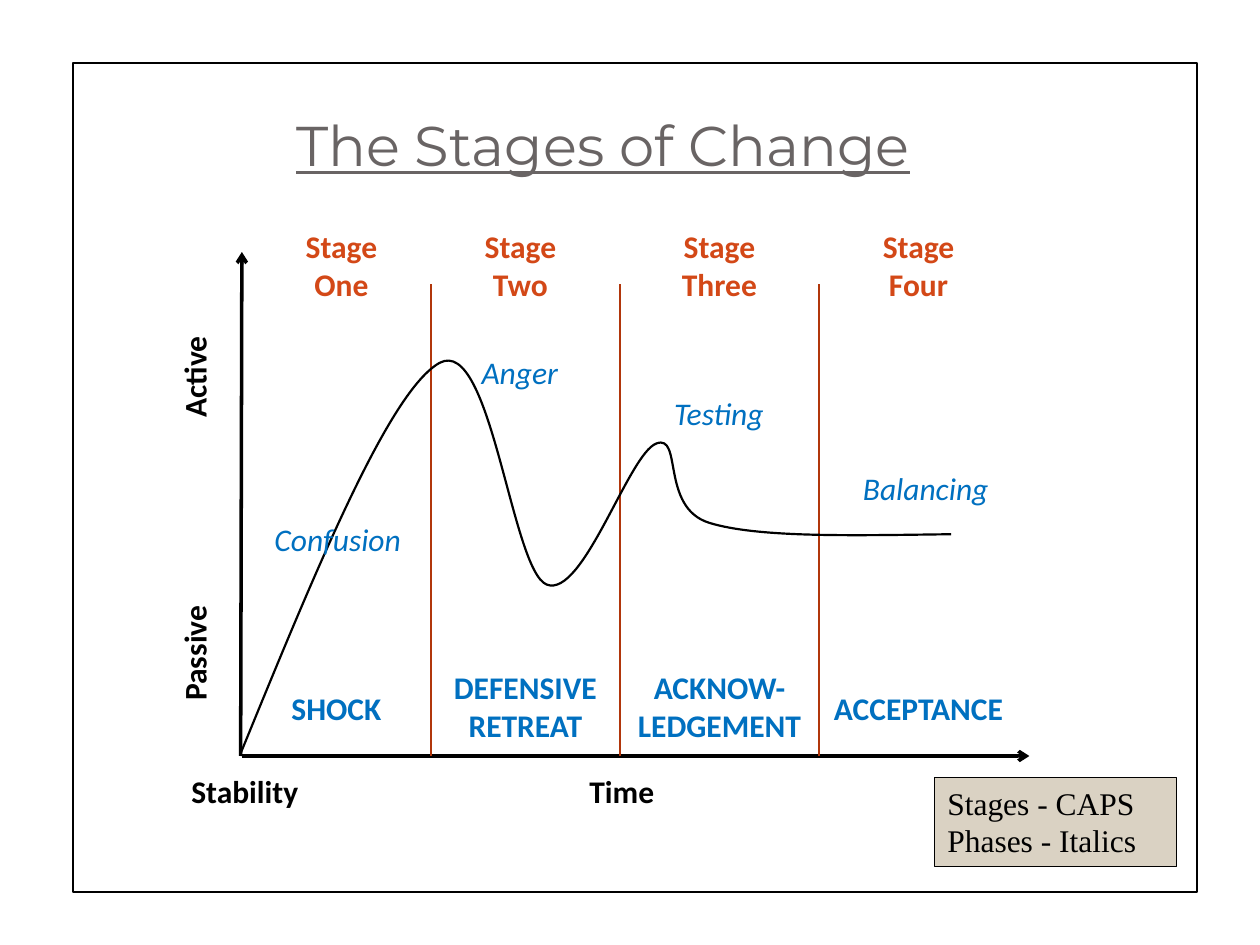
import pptx
import pptx.dml.color
import pptx.enum.shapes
import pptx.enum.text
import pptx.oxml.ns
import pptx.util
from lxml import etree
from pptx.util import Inches

BLACK, BLUE, ORANGE, RUST = "000000", "0070C0", "D34817", "B1360B"
ALIGN = pptx.enum.text.PP_ALIGN
RECTANGLE = pptx.enum.shapes.MSO_SHAPE.RECTANGLE
qn = pptx.oxml.ns.qn


def color(hex_code):
    """Return the colour for a hex string."""
    return pptx.dml.color.RGBColor.from_string(hex_code)


def set_line(item, hex_code, width):
    """Give a shape or connector a solid line."""
    item.line.color.rgb = color(hex_code)
    item.line.width = pptx.util.Pt(width)


def write(frame, lines, hex_code, align=ALIGN.LEFT, font="Calibri", size=18,
          bold=False, italic=False, underline=False):
    """Write one paragraph for each line of text."""
    frame.word_wrap = True
    frame.vertical_anchor = pptx.enum.text.MSO_ANCHOR.TOP
    frame.auto_size = pptx.enum.text.MSO_AUTO_SIZE.SHAPE_TO_FIT_TEXT
    for index, line in enumerate(lines):
        paragraph = frame.add_paragraph() if index else frame.paragraphs[0]
        paragraph.alignment = align
        run = paragraph.add_run()
        run.text = line
        run.font.name = font
        run.font.size = pptx.util.Pt(size)
        run.font.bold = bold
        run.font.italic = italic
        run.font.underline = underline
        run.font.color.rgb = color(hex_code)


def add_title(slide, text):
    """Place and format the slide title."""
    title = slide.shapes.title
    title.left, title.top = Inches(2.25), Inches(0.83)
    title.width, title.height = Inches(5.83), Inches(0.64)
    write(title.text_frame, [text], "696464", font="Montserrat", size=32,
          underline=True)


def add_box(slide, left, top, width, height, line_width, fill=None):
    """Add an outlined rectangle with an optional fill."""
    box = slide.shapes.add_shape(RECTANGLE, Inches(left), Inches(top),
                                 Inches(width), Inches(height))
    box.shadow.inherit = False
    set_line(box, BLACK, line_width)
    if fill:
        box.fill.solid()
        box.fill.fore_color.rgb = color(fill)
    else:
        box.fill.background()
    return box


def add_label(slide, lines, left, top, width, hex_code, height=0.4,
              rotation=0, **style):
    """Add a text label."""
    label = slide.shapes.add_textbox(Inches(left), Inches(top),
                                     Inches(width), Inches(height))
    label.rotation = rotation
    write(label.text_frame, lines, hex_code, **style)


def add_line(slide, start, end, hex_code, width, arrow=False):
    """Add a straight line, with an arrowhead at its end if asked."""
    line = slide.shapes.add_connector(
        pptx.enum.shapes.MSO_CONNECTOR.STRAIGHT,
        *(Inches(value) for value in start + end))
    set_line(line, hex_code, width)
    properties = line._element.spPr
    if arrow:
        etree.SubElement(properties.find(qn("a:ln")), qn("a:tailEnd"), type="arrow")
    etree.SubElement(properties, qn("a:effectLst"))


def add_curve(slide, knots):
    """Draw an open chain of cubic curves, three knots to a curve."""
    start, *rest = [(Inches(x), Inches(y)) for x, y in knots]
    builder = slide.shapes.build_freeform(*start, scale=1.0)
    builder.add_line_segments(rest, close=False)
    curve = builder.convert_to_shape()
    segments = list(curve._element.iter(qn("a:lnTo")))
    outline = segments[0].getparent()
    for first in range(0, len(segments), 3):
        cubic = etree.SubElement(outline, qn("a:cubicBezTo"))
        for segment in segments[first:first + 3]:
            cubic.append(segment[0])
            outline.remove(segment)
    curve.shadow.inherit = False
    curve.fill.background()
    set_line(curve, BLACK, 1.25)


def main():
    """Build the stages of change slide."""
    deck = pptx.Presentation()
    deck.slide_width, deck.slide_height = Inches(10), Inches(7.5)
    slide = deck.slides.add_slide(deck.slide_layouts[5])
    add_box(slide, 0.58, 0.5, 8.92, 6.58, 1)
    add_title(slide, "The Stages of Change")

    add_line(slide, (1.91, 6), (1.92, 2), BLACK, 2, arrow=True)
    add_line(slide, (1.92, 6), (8.17, 6), BLACK, 2, arrow=True)
    for divider in (3.42, 4.92, 6.5):
        add_line(slide, (divider, 6), (divider, 2.25), RUST, 0.75)
    add_curve(slide, [
        (1.91, 5.98), (2.5, 4.54), (3.09, 3.1), (3.49, 2.88),
        (3.9, 2.66), (4.06, 4.53), (4.34, 4.64),
        (4.63, 4.75), (4.99, 3.6), (5.21, 3.52),
        (5.42, 3.44), (5.24, 4.03), (5.63, 4.15),
        (6.02, 4.27), (6.78, 4.25), (7.55, 4.24)])

    for number, left in (("One", 2.25), ("Two", 3.67),
                         ("Three", 5.25), ("Four", 6.83)):
        add_label(slide, ["Stage", number], left, 1.75, 0.92, ORANGE, 0.71,
                  align=ALIGN.CENTER, bold=True)
    for phase, left, top, align in (("Confusion", 2.08, 4.08, ALIGN.LEFT),
                                    ("Anger", 3.5, 2.75, ALIGN.CENTER),
                                    ("Testing", 5.08, 3.08, ALIGN.CENTER),
                                    ("Balancing", 6.75, 3.67, ALIGN.LEFT)):
        add_label(slide, [phase], left, top, 1.25, BLUE, align=align, italic=True)
    for caption, left, top, width, rotation in (("Active", 1.04, 2.71, 1, 270),
                                                ("Passive", 1.04, 4.96, 1, 270),
                                                ("Stability", 1.42, 6.08, 1.08, 0),
                                                ("Time", 4.58, 6.08, 1, 0)):
        add_label(slide, [caption], left, top, width, BLACK,
                  rotation=rotation, bold=True)

    legend = add_box(slide, 7.42, 6.17, 1.92, 0.71, 0.5, "DAD2C3")
    write(legend.text_frame, ["Stages - CAPS", "Phases - Italics"], BLACK,
          font="Times New Roman")
    for stage, left, top, width, height in (
            (["SHOCK"], 2.17, 5.42, 1, 0.4),
            (["DEFENSIVE", "RETREAT"], 3.42, 5.25, 1.5, 0.71),
            (["ACKNOW-LEDGEMENT"], 4.92, 5.25, 1.58, 0.71),
            (["ACCEPTANCE"], 6.5, 5.42, 1.58, 0.4)):
        add_label(slide, stage, left, top, width, BLUE, height,
                  align=ALIGN.CENTER, bold=True)
    deck.save("out.pptx")


if __name__ == "__main__":
    main()
